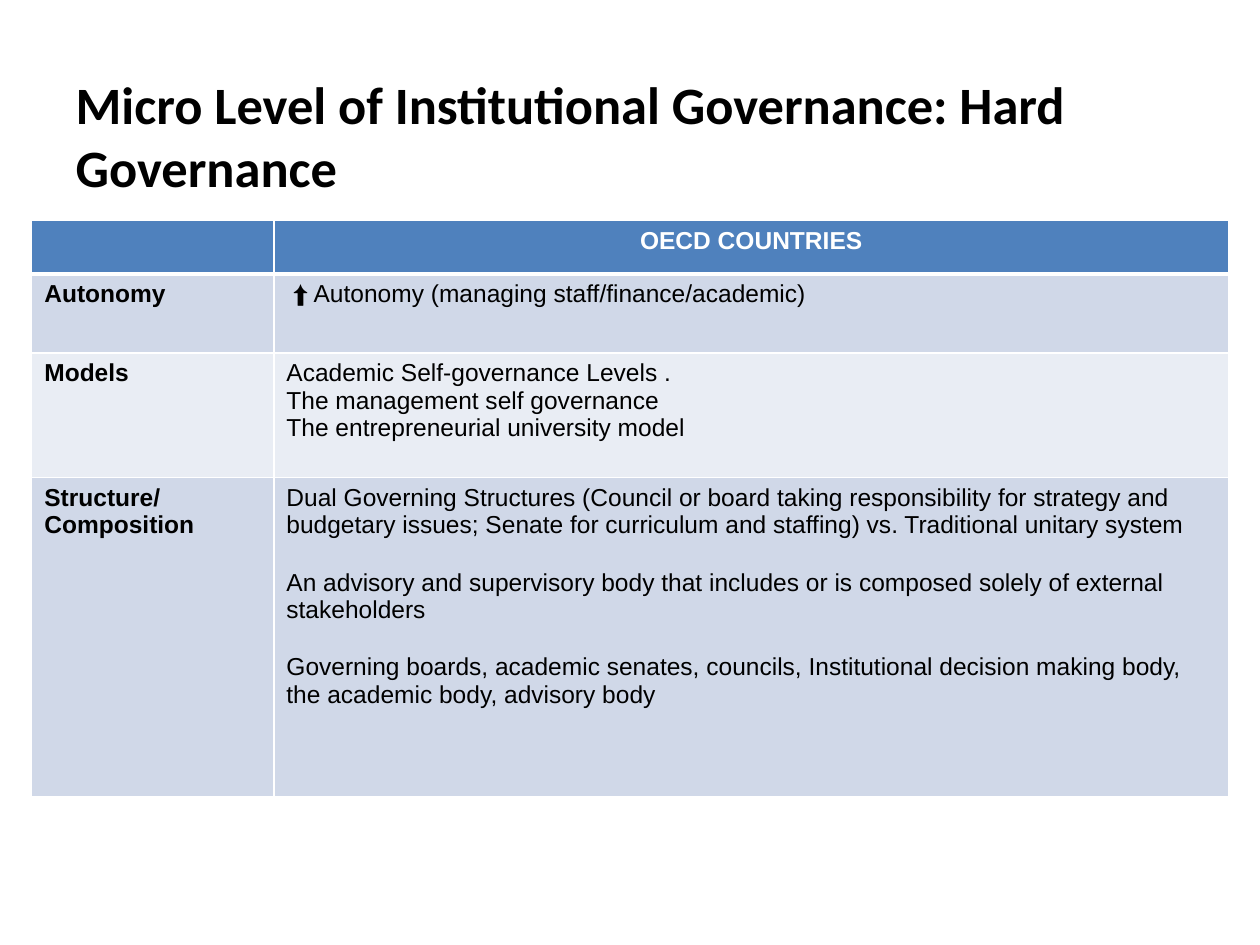
from lxml.etree import SubElement
from pptx import Presentation
from pptx.dml.color import RGBColor
from pptx.enum.text import MSO_ANCHOR, MSO_AUTO_SIZE, PP_ALIGN
from pptx.oxml.ns import qn
from pptx.util import Cm, Pt

COLORS = {
    "text": "000000",
    "white": "FFFFFF",
    "header": "4F81BD",
    "band_dark": "D0D8E8",
    "band_light": "E9EDF4",
}
COLUMN_WIDTHS = [4.88, 19.25]
ROW_HEIGHTS = [1.07, 1.6, 2.51, 6.43]
ROWS = [
    ("", ["OECD COUNTRIES"]),
    ("Autonomy", [" ⬆ Autonomy (managing staff/finance/academic)"]),
    ("Models", [
        "Academic Self-governance Levels .",
        "The management self governance",
        "The entrepreneurial university model",
    ]),
    ("Structure/ Composition", [
        "Dual Governing Structures (Council or board taking responsibility for strategy "
        "and budgetary issues; Senate for curriculum and staffing) vs. Traditional unitary system",
        "An advisory and supervisory body that includes or is composed solely of external stakeholders",
        "Governing boards, academic senates, councils, Institutional decision making body, "
        "the academic body, advisory body",
    ]),
]


def rgb(name):
    return RGBColor.from_string(COLORS[name])


def write_text(frame, lines, font="Arial", size=14, color="text", bold=False,
               align=PP_ALIGN.LEFT, gap=0):
    for index, line in enumerate(lines):
        para = frame.add_paragraph() if index else frame.paragraphs[0]
        para.alignment = align
        para.space_before = Pt(gap if index else 0)
        span = para.add_run()
        span.text = line
        span.font.name = font
        span.font.size = Pt(size)
        span.font.bold = bold
        span.font.color.rgb = rgb(color)


def set_borders(cell, widths):
    props = cell._tc.get_or_add_tcPr()
    for index, (side, width) in enumerate(widths.items()):
        line = props.makeelement(qn(f"a:{side}"), {"w": str(Pt(width))})
        fill = SubElement(line, qn("a:solidFill"))
        SubElement(fill, qn("a:srgbClr"), val=COLORS["white"])
        props.insert(index, line)


def add_title(page, left, top, width, height):
    box = page.shapes.title
    box.left, box.top, box.width, box.height = map(Cm, (left, top, width, height))
    frame = box.text_frame
    frame.word_wrap = True
    frame.auto_size = MSO_AUTO_SIZE.NONE
    frame.vertical_anchor = MSO_ANCHOR.TOP
    write_text(frame, ["Micro Level of Institutional Governance: Hard Governance"],
               font="Calibri", size=30, bold=True)


def add_governance_table(page, left, top):
    table = page.shapes.add_table(
        len(ROWS), len(COLUMN_WIDTHS), Cm(left), Cm(top),
        Cm(sum(COLUMN_WIDTHS)), Cm(sum(ROW_HEIGHTS))).table
    for column, width in zip(table.columns, COLUMN_WIDTHS):
        column.width = Cm(width)
    for index, (label, lines) in enumerate(ROWS):
        table.rows[index].height = Cm(ROW_HEIGHTS[index])
        is_header = index == 0
        band = "header" if is_header else "band_dark" if index % 2 else "band_light"
        label_cell, detail_cell = table.rows[index].cells
        for cell in (label_cell, detail_cell):
            cell.fill.solid()
            cell.fill.fore_color.rgb = rgb(band)
            set_borders(cell, {"lnL": 1, "lnR": 1, "lnT": 3 if index == 1 else 1,
                               "lnB": 3 if is_header else 1})
        if label:
            write_text(label_cell.text_frame, [label], bold=True)
        write_text(detail_cell.text_frame, lines, bold=is_header,
                   color="white" if is_header else "text",
                   align=PP_ALIGN.CENTER if is_header else PP_ALIGN.LEFT,
                   gap=17 if index == len(ROWS) - 1 else 0)


def main():
    deck = Presentation()
    deck.slide_width, deck.slide_height = Cm(25.4), Cm(19.05)
    page = deck.slides.add_slide(deck.slide_layouts[5])
    add_title(page, 1.27, 1.32, 22.86, 2.21)
    add_governance_table(page, 0.64, 4.45)
    deck.save("out.pptx")


if __name__ == "__main__":
    main()
